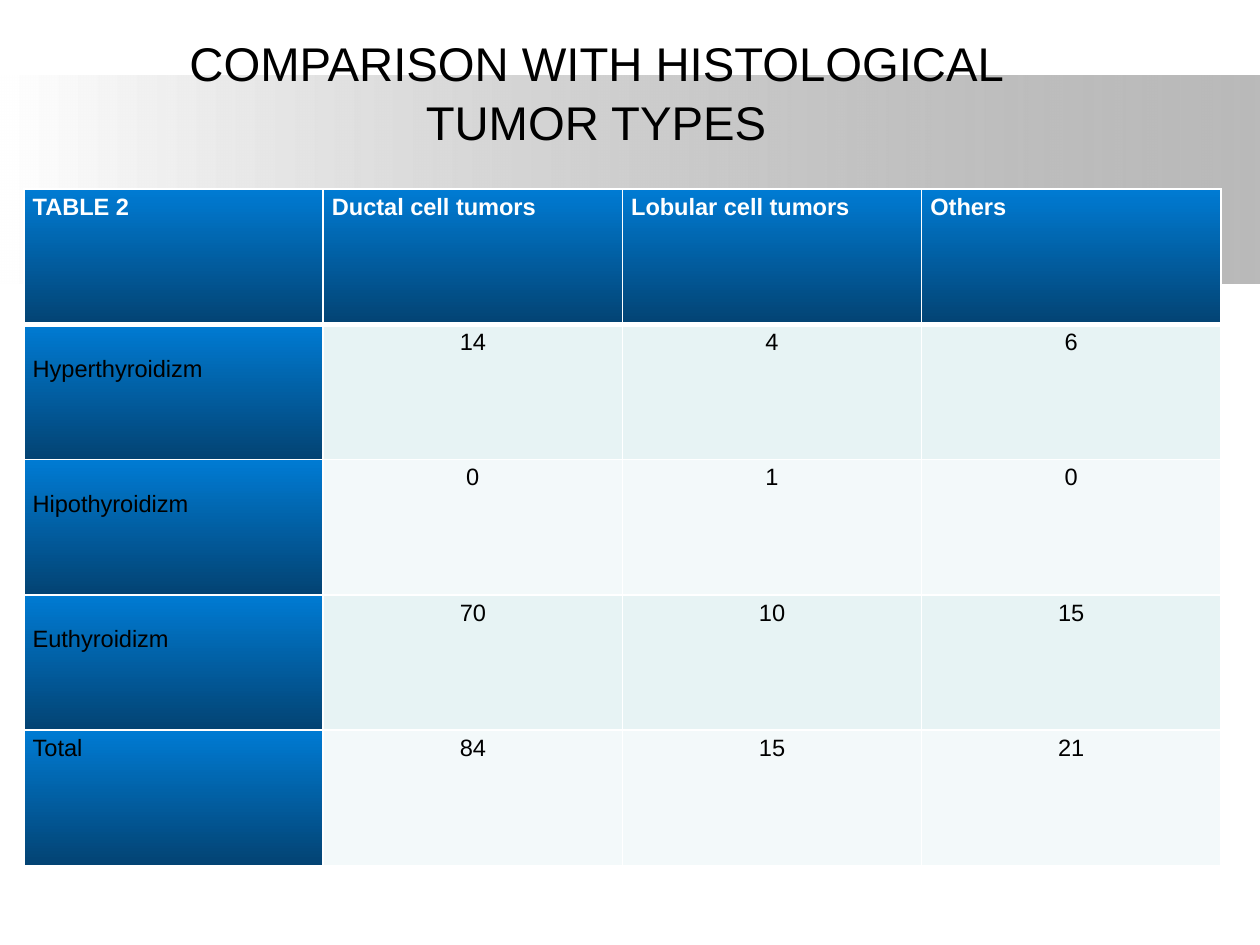
from lxml import etree
from pptx import Presentation
from pptx.dml.color import RGBColor
from pptx.enum.shapes import MSO_SHAPE
from pptx.enum.text import MSO_ANCHOR, PP_ALIGN
from pptx.oxml.ns import qn
from pptx.util import Inches, Pt

RECTANGLE = MSO_SHAPE.RECTANGLE
MIDDLE, TOP = MSO_ANCHOR.MIDDLE, MSO_ANCHOR.TOP
CENTER, LEFT = PP_ALIGN.CENTER, PP_ALIGN.LEFT

COLORS = {
    "text": "000000",
    "white": "FFFFFF",
    "band_end": "808080",
    "blue_top": "007BD3",
    "blue_bottom": "034373",
    "odd_row": "E7F3F4",
    "even_row": "F3F9FA",
}
FONT = "Arial"
ROWS = [
    ["TABLE 2", "Ductal cell tumors", "Lobular cell tumors", "Others"],
    ["Hyperthyroidizm", "14", "4", "6"],
    ["Hipothyroidizm", "0", "1", "0"],
    ["Euthyroidizm", "70", "10", "15"],
    ["Total", "84", "15", "21"],
]
LOWERED_LABELS = ("Hyperthyroidizm", "Hipothyroidizm", "Euthyroidizm")


def fill_gradient(fill, start, end, angle):
    """Fill with two colours; the angle runs counter-clockwise from the right."""
    fill.gradient()
    fill.gradient_angle = angle
    for stop, position, color in zip(fill.gradient_stops, (0, 1), (start, end)):
        stop.position = position
        stop.color.rgb = RGBColor.from_string(COLORS[color])


def add_borders(cell, widths):
    """Draw white borders, with widths in points for left, right, top, bottom."""
    properties = cell._tc.get_or_add_tcPr()
    for index, (side, width) in enumerate(zip("LRTB", widths)):
        line = etree.Element(qn(f"a:ln{side}"), w=str(Pt(width)))
        solid = etree.SubElement(line, qn("a:solidFill"))
        etree.SubElement(solid, qn("a:srgbClr"), val=COLORS["white"])
        properties.insert(index, line)


prs = Presentation()
prs.slide_width, prs.slide_height = Inches(10), Inches(7.5)
slide = prs.slides.add_slide(prs.slide_layouts[5])
title = slide.shapes.title

# Grey band behind the title
band = slide.shapes.add_shape(
    RECTANGLE, 0, Inches(0.6), prs.slide_width, Inches(1.65))
band.shadow.inherit = False
band.line.fill.background()
fill_gradient(band.fill, "white", "band_end", 0)
band_end = band._element.spPr.findall(".//" + qn("a:srgbClr"))[-1]
etree.SubElement(band_end, qn("a:alpha"), val="54000")
title._element.addprevious(band._element)

# Title
title.left, title.top = Inches(0.98), Inches(0.13)
title.width, title.height = Inches(7.5), Inches(1.18)
title.text_frame.text = "COMPARISON WITH HISTOLOGICAL TUMOR TYPES"
title.text_frame.word_wrap = True
title.text_frame.vertical_anchor = MIDDLE
heading = title.text_frame.paragraphs[0]
heading.alignment = CENTER
heading.line_spacing = 1.05
heading.font.name, heading.font.size = FONT, Pt(27)
heading.font.color.rgb = RGBColor.from_string(COLORS["text"])

# Table of tumor types by thyroid status
table = slide.shapes.add_table(
    len(ROWS), len(ROWS[0]),
    Inches(0.19), Inches(1.5), Inches(9.5), Inches(5.37)).table

for r, values in enumerate(ROWS):
    for c, value in enumerate(values):
        cell = table.cell(r, c)
        is_header, is_label = r == 0, c == 0
        cell.text_frame.text = value
        cell.vertical_anchor = TOP
        cell.margin_left = cell.margin_right = Inches(0.07)
        cell.margin_top = Inches(0.25 if value in LOWERED_LABELS else 0.04)
        cell.margin_bottom = Inches(0.04)
        if is_header or is_label:
            fill_gradient(cell.fill, "blue_top", "blue_bottom", 270)
        else:
            cell.fill.solid()
            row_color = COLORS["odd_row" if r % 2 else "even_row"]
            cell.fill.fore_color.rgb = RGBColor.from_string(row_color)
        add_borders(cell, (1, 1, 3 if r == 1 else 1, 3 if is_header else 1))

        entry = cell.text_frame.paragraphs[0]
        entry.alignment = LEFT if is_header or is_label else CENTER
        entry.font.name, entry.font.size = FONT, Pt(13.5)
        entry.font.bold = is_header
        entry.font.color.rgb = RGBColor.from_string(
            COLORS["white" if is_header else "text"])

prs.save("out.pptx")
